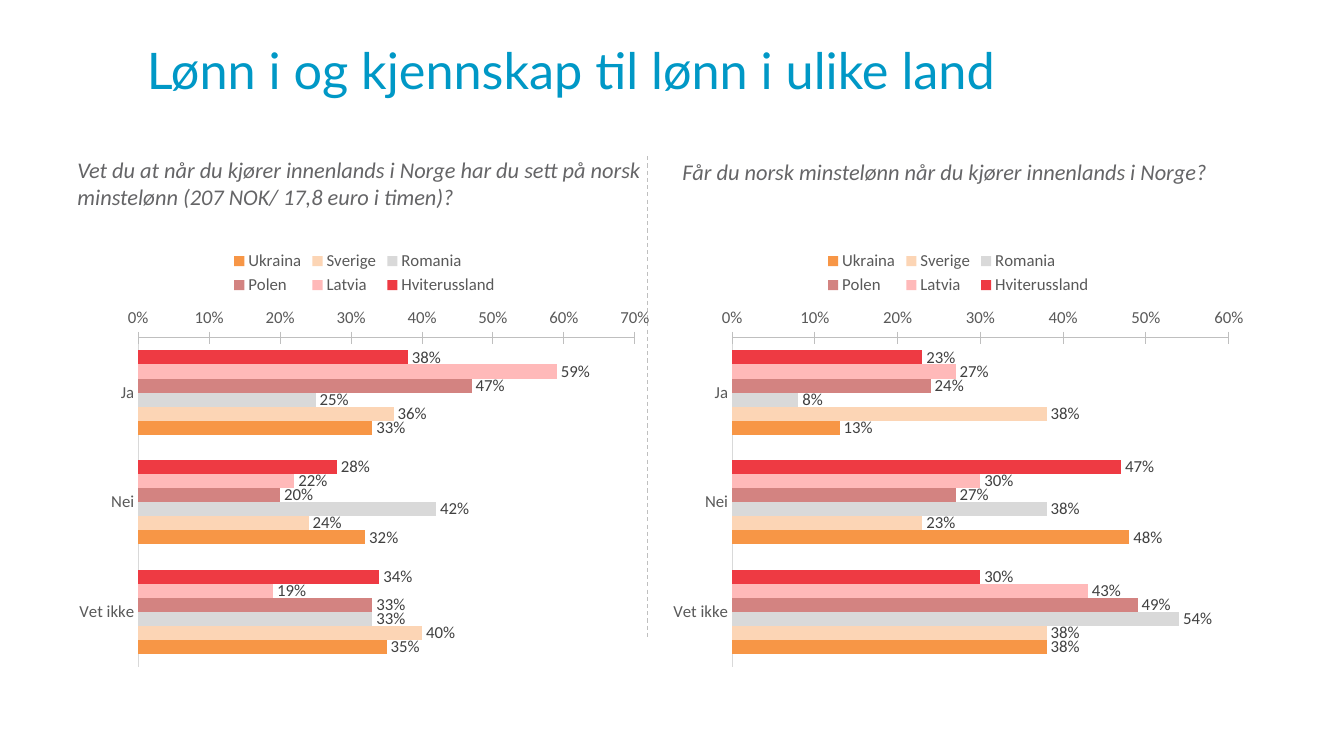
from lxml import etree
from pptx import Presentation
from pptx.chart.data import CategoryChartData
from pptx.dml.color import RGBColor
from pptx.enum.chart import XL_CHART_TYPE, XL_LABEL_POSITION, XL_LEGEND_POSITION, XL_TICK_MARK
from pptx.enum.dml import MSO_LINE
from pptx.enum.shapes import MSO_CONNECTOR
from pptx.enum.text import MSO_ANCHOR
from pptx.oxml.ns import qn
from pptx.util import Inches, Pt

BAR_CLUSTERED = XL_CHART_TYPE.BAR_CLUSTERED
OUTSIDE_END = XL_LABEL_POSITION.OUTSIDE_END
LEGEND_TOP = XL_LEGEND_POSITION.TOP
TICK_NONE, TICK_CROSS = XL_TICK_MARK.NONE, XL_TICK_MARK.CROSS
ANCHOR_MIDDLE, ANCHOR_BOTTOM = MSO_ANCHOR.MIDDLE, MSO_ANCHOR.BOTTOM

COLORS = {
    "title": "0098C6",
    "question": "656567",
    "axis_text": "595959",
    "label": "404040",
    "divider": "BFBFBF",
    "value_axis": "BFBFBF",
    "category_axis": "D9D9D9",
    "Hviterussland": "EE3A43",
    "Latvia": "FFB9B9",
    "Polen": "D38381",
    "Romania": "D9D9D9",
    "Sverige": "FCD5B5",
    "Ukraina": "F79646",
}
ANSWERS = ["Ja", "Nei", "Vet ikke"]
PANELS = [
    {
        "question": "Vet du at når du kjører innenlands i Norge har du sett på norsk "
                    "minstelønn (207 NOK/ 17,8 euro i timen)?",
        "question_at": (0.67, 1.43),
        "chart_left": 0.67,
        "maximum": 0.7,
        "shares": {
            "Hviterussland": (0.38, 0.28, 0.34),
            "Latvia": (0.59, 0.22, 0.19),
            "Polen": (0.47, 0.20, 0.33),
            "Romania": (0.25, 0.42, 0.33),
            "Sverige": (0.36, 0.24, 0.40),
            "Ukraina": (0.33, 0.32, 0.35),
        },
    },
    {
        "question": "Får du norsk minstelønn når du kjører innenlands i Norge?",
        "question_at": (6.67, 1.18),
        "chart_left": 6.56,
        "maximum": 0.6,
        "shares": {
            "Hviterussland": (0.23, 0.47, 0.30),
            "Latvia": (0.27, 0.30, 0.43),
            "Polen": (0.24, 0.27, 0.49),
            "Romania": (0.08, 0.38, 0.54),
            "Sverige": (0.38, 0.23, 0.38),
            "Ukraina": (0.13, 0.48, 0.38),
        },
    },
]


def set_font(font, size, color, name="Calibri"):
    font.name = name
    font.size = Pt(size)
    font.color.rgb = RGBColor.from_string(COLORS[color])


def add_text(slide, box, text, anchor):
    """Add a wrapping text box and return the font of its only run."""
    shape = slide.shapes.add_textbox(*(Inches(length) for length in box))
    frame = shape.text_frame
    frame.word_wrap = True
    frame.vertical_anchor = anchor
    run = frame.paragraphs[0].add_run()
    run.text = text
    return run.font


presentation = Presentation()
presentation.slide_width = Inches(13.33)
presentation.slide_height = Inches(7.5)
slide = presentation.slides.add_slide(presentation.slide_layouts[6])

title_font = add_text(slide, (1.36, 0.06, 11.3, 1.25),
                      "Lønn i og kjennskap til lønn i ulike land", ANCHOR_MIDDLE)
set_font(title_font, 36, "title", "Lato")

divider = slide.shapes.add_connector(
    MSO_CONNECTOR.STRAIGHT, Inches(6.42), Inches(1.55), Inches(6.42), Inches(6.32))
divider.line.color.rgb = RGBColor.from_string(COLORS["divider"])
divider.line.width = Pt(0.75)
divider.line.dash_style = MSO_LINE.DASH
etree.SubElement(divider.line._get_or_add_ln().getparent(), qn("a:effectLst"))

for panel in PANELS:
    question_font = add_text(slide, (*panel["question_at"], 5.89, 0.7),
                             panel["question"], ANCHOR_BOTTOM)
    set_font(question_font, 16, "question")
    question_font.italic = True

    chart_data = CategoryChartData(number_format="0%")
    chart_data.categories = ANSWERS
    for country, shares in panel["shares"].items():
        chart_data.add_series(country, shares)
    chart = slide.shapes.add_chart(
        BAR_CLUSTERED, Inches(panel["chart_left"]), Inches(2.38),
        Inches(5.89), Inches(4.32), chart_data).chart
    chart.has_title = False
    set_font(chart.font, 12, "axis_text")
    chart.has_legend = True
    chart.legend.position = LEGEND_TOP
    chart.legend.include_in_layout = False
    set_font(chart.legend.font, 12, "axis_text")

    category_axis, value_axis = chart.category_axis, chart.value_axis
    category_axis.reverse_order = True
    value_axis.minimum_scale = 0
    value_axis.maximum_scale = panel["maximum"]
    value_axis.major_unit = 0.1
    value_axis.tick_labels.number_format = "0%"
    value_axis.tick_labels.number_format_is_linked = False
    for axis, tick_mark, color in ((category_axis, TICK_NONE, "category_axis"),
                                   (value_axis, TICK_CROSS, "value_axis")):
        axis.has_major_gridlines = False
        axis.major_tick_mark = tick_mark
        axis.minor_tick_mark = TICK_NONE
        axis.format.line.color.rgb = RGBColor.from_string(COLORS[color])
        axis.format.line.width = Pt(0.75)
        set_font(axis.tick_labels.font, 12, "axis_text")

    plot = chart.plots[0]
    plot.gap_width = 182
    plot.overlap = 0
    plot.vary_by_categories = False
    for series in plot.series:
        series.format.fill.solid()
        series.format.fill.fore_color.rgb = RGBColor.from_string(COLORS[series.name])
        series.invert_if_negative = False
        labels = series.data_labels
        labels.show_value = True
        labels.position = OUTSIDE_END
        labels.number_format = "0%"
        labels.number_format_is_linked = False
        set_font(labels.font, 12, "label")

presentation.save("out.pptx")
